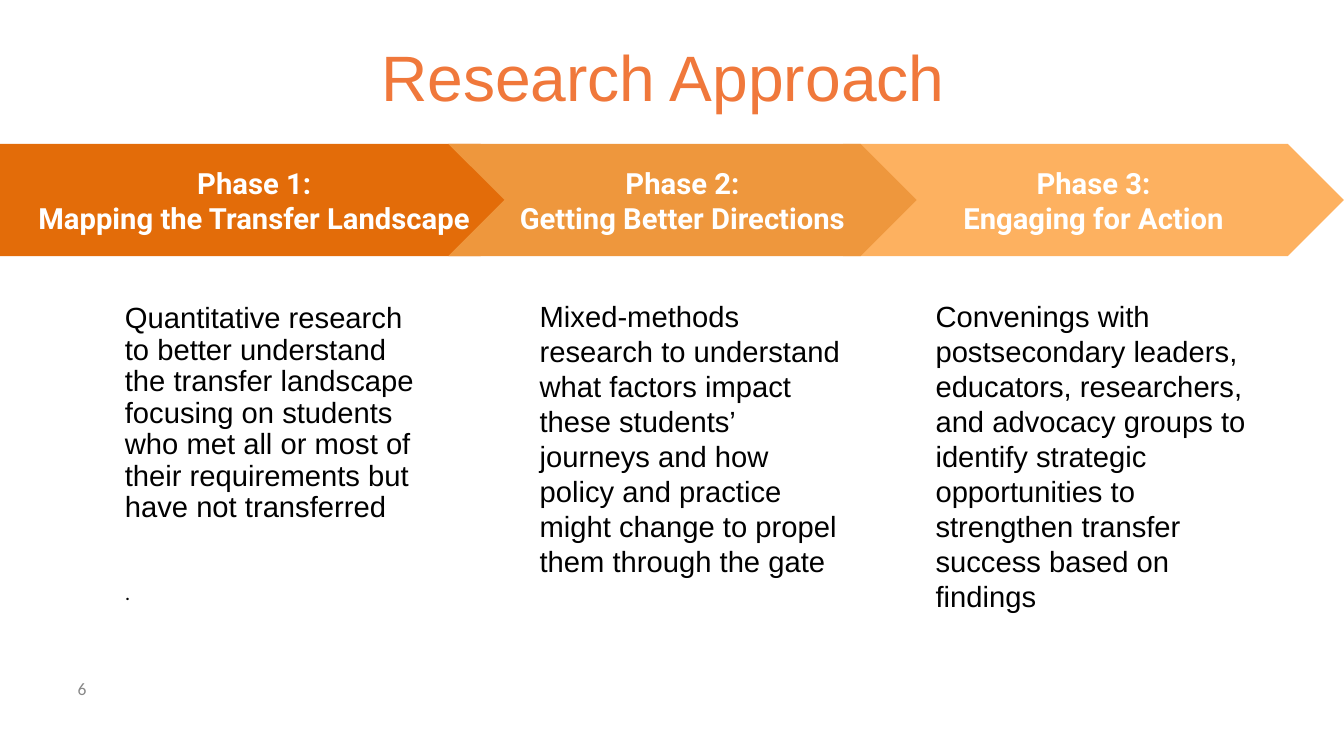
from dataclasses import dataclass

from pptx import Presentation
from pptx.dml.color import RGBColor
from pptx.enum.shapes import MSO_SHAPE
from pptx.enum.text import MSO_ANCHOR, PP_ALIGN
from pptx.slide import Slide
from pptx.text.text import TextFrame
from pptx.util import Inches, Pt

WHITE = RGBColor(0xFF, 0xFF, 0xFF)
BLACK = RGBColor(0x00, 0x00, 0x00)
GREY = RGBColor(0x88, 0x88, 0x88)
TITLE_ORANGE = RGBColor(0xF0, 0x78, 0x3B)
DARK_ORANGE = RGBColor(0xE3, 0x6C, 0x09)
MID_ORANGE = RGBColor(0xEE, 0x97, 0x3D)
LIGHT_ORANGE = RGBColor(0xFD, 0xB1, 0x60)

BANNER_TOP = 1.37
BANNER_HEIGHT = 1.07
PHASE_INSET = 0.13


@dataclass(frozen=True)
class Phase:
    heading: str
    outline: MSO_SHAPE
    color: RGBColor
    left: float
    width: float
    summary: str
    summary_box: tuple[float, float, float, float]
    line_spacing: float = 1.0


PHASES = [
    Phase(
        "Phase 3:\nEngaging for Action",
        MSO_SHAPE.CHEVRON, LIGHT_ORANGE, 8.03, 4.77,
        "Convenings with postsecondary leaders, educators, researchers, "
        "and advocacy groups to identify strategic opportunities to "
        "strengthen transfer success based on findings",
        (8.78, 2.71, 3.41, 3.66),
    ),
    Phase(
        "Phase 1:\nMapping the Transfer Landscape",
        MSO_SHAPE.PENTAGON, DARK_ORANGE, 0, 5.11,
        "Quantitative research to better understand the transfer landscape "
        "focusing on students who met all or most of their requirements "
        "but have not transferred",
        (1.06, 2.76, 3.13, 3.78),
        0.9,
    ),
    Phase(
        "Phase 2:\nGetting Better Directions",
        MSO_SHAPE.CHEVRON, MID_ORANGE, 4.27, 4.46,
        "Mixed-methods research to understand what factors impact these "
        "students’ journeys and how policy and practice might change to "
        "propel them through the gate",
        (5.01, 2.71, 3.13, 3.66),
    ),
]


def set_insets(frame: TextFrame, inset: float) -> None:
    frame.margin_left = frame.margin_right = Inches(inset)
    frame.margin_top = frame.margin_bottom = Inches(inset)


def format_text(frame: TextFrame, font_name: str, size: float, color: RGBColor,
                align: PP_ALIGN = PP_ALIGN.LEFT, bold: bool = False) -> None:
    for paragraph in frame.paragraphs:
        paragraph.alignment = align
        for run in paragraph.runs:
            run.font.name = font_name
            run.font.size = Pt(size)
            run.font.bold = bold
            run.font.color.rgb = color


def add_text(slide: Slide, text: str, box: tuple[float, float, float, float],
             anchor: MSO_ANCHOR = MSO_ANCHOR.MIDDLE) -> TextFrame:
    frame = slide.shapes.add_textbox(*map(Inches, box)).text_frame
    frame.word_wrap = True
    frame.vertical_anchor = anchor
    frame.text = text
    return frame


def add_banner(slide: Slide, phase: Phase) -> None:
    banner = slide.shapes.add_shape(
        phase.outline, Inches(phase.left), Inches(BANNER_TOP),
        Inches(phase.width), Inches(BANNER_HEIGHT))
    banner.adjustments[0] = 0.5
    banner.shadow.inherit = False
    banner.fill.solid()
    banner.fill.fore_color.rgb = phase.color
    banner.line.fill.background()
    heading = banner.text_frame
    heading.word_wrap = True
    heading.vertical_anchor = MSO_ANCHOR.MIDDLE
    set_insets(heading, PHASE_INSET)
    heading.text = phase.heading
    format_text(heading, "Roboto", 20, WHITE, PP_ALIGN.CENTER, True)


def add_summary(slide: Slide, phase: Phase) -> TextFrame:
    summary = add_text(slide, phase.summary, phase.summary_box, MSO_ANCHOR.TOP)
    set_insets(summary, PHASE_INSET)
    format_text(summary, "Arial", 20, BLACK)
    summary.paragraphs[0].line_spacing = phase.line_spacing
    return summary


def add_closing_dot(summary: TextFrame) -> None:
    dot = summary.add_paragraph()
    dot.text = "."
    dot.line_spacing = 1.15
    dot.space_before = Pt(35)
    dot.runs[0].font.name = "Roboto"
    dot.runs[0].font.size = Pt(15)
    dot.runs[0].font.color.rgb = BLACK


def main() -> None:
    presentation = Presentation()
    presentation.slide_width = Inches(12.8)
    presentation.slide_height = Inches(7.2)
    slide = presentation.slides.add_slide(presentation.slide_layouts[6])

    title = add_text(slide, "Research Approach ", (0.64, 0.12, 11.52, 1.2))
    format_text(title, "Arial", 44, TITLE_ORANGE, PP_ALIGN.CENTER)
    page_number = add_text(slide, "6", (0.64, 6.37, 2.88, 0.38))
    format_text(page_number, "Calibri", 12, GREY)

    for phase in PHASES:
        add_banner(slide, phase)
        summary = add_summary(slide, phase)
        if phase.outline == MSO_SHAPE.PENTAGON:
            add_closing_dot(summary)

    presentation.save("out.pptx")


if __name__ == "__main__":
    main()
